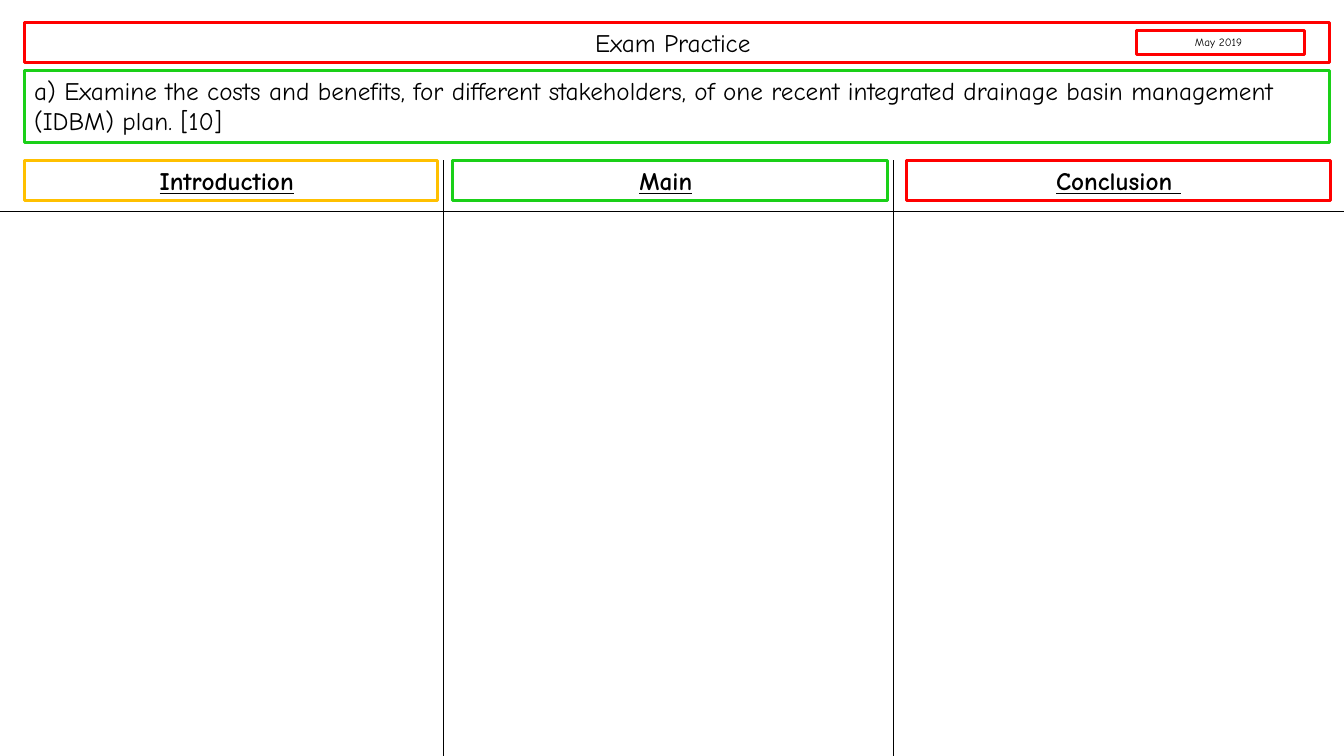
import pptx
import pptx.dml.color
import pptx.enum.shapes
import pptx.enum.text
import pptx.util

PX = 9144  # EMU per px, 100 px to the inch
SLIDE_W, SLIDE_H = 1333, 750
COLOURS = {
    "red": "FF0000",
    "green": "1AD018",
    "amber": "FFC000",
    "text": "000000",
    "divider": "000000",
}
LEFT = pptx.enum.text.PP_ALIGN.LEFT
CENTER = pptx.enum.text.PP_ALIGN.CENTER
HEADING = {"bold": True, "underline": True}


def px(*lengths):
    return [length * PX for length in lengths]


def rgb(name):
    return pptx.dml.color.RGBColor.from_string(COLOURS[name])


def add_box(slide, bounds, border, runs, size=18, align=CENTER):
    """Outlined text box; runs is a list of (text, font format)."""
    box = slide.shapes.add_textbox(*px(*bounds))
    box.line.color.rgb = rgb(border)
    box.line.width = pptx.util.Pt(2.25)
    frame = box.text_frame
    frame.word_wrap = True
    frame.auto_size = pptx.enum.text.MSO_AUTO_SIZE.SHAPE_TO_FIT_TEXT
    paragraph = frame.paragraphs[0]
    paragraph.alignment = align
    for text, extra in runs:
        run = paragraph.add_run()
        run.text = text
        run.font.color.rgb = rgb("text")
        font_format = {"name": "Comic Neue", "size": pptx.util.Pt(size), **extra}
        for attribute, value in font_format.items():
            setattr(run.font, attribute, value)


def add_divider(slide, *ends):
    straight = pptx.enum.shapes.MSO_CONNECTOR.STRAIGHT
    divider = slide.shapes.add_connector(straight, *px(*ends))
    divider.line.color.rgb = rgb("divider")
    divider.line.width = pptx.util.Pt(0.5)
    properties = divider._element.spPr
    properties.append(properties.makeelement(pptx.oxml.ns.qn("a:effectLst"), {}))


def main():
    deck = pptx.Presentation()
    deck.slide_width, deck.slide_height = px(SLIDE_W, SLIDE_H)
    slide = deck.slides.add_slide(deck.slide_layouts[6])

    # Question, title and exam date
    question = (
        "a) Examine the costs and benefits, for different stakeholders, of one "
        "recent integrated drainage basin management (IDBM) plan. [10]"
    )
    add_box(slide, (24, 70, 1295, 71), "green", [(question, {})], align=LEFT)
    add_box(slide, (24, 22, 1295, 40), "red", [("Exam Practice ", {})])
    add_box(slide, (1127, 30, 167, 24), "red", [("May 2019 ", {})], size=8)

    # Column headings
    top = 159
    columns = [
        (24, 410, "amber", [("Introduction", HEADING), (" ", {})]),
        (449, 431, "green", [("Main", HEADING), (" ", {})]),
        (899, 421, "red", [("Conclusion ", HEADING)]),
    ]
    for left, width, border, runs in columns:
        add_box(slide, (left, top, width, 40), border, runs)

    # Column and heading dividers
    for x in (440, 886):
        add_divider(slide, x, top, x, SLIDE_H)
    add_divider(slide, 0, 210, SLIDE_W, 210)

    deck.save("out.pptx")


if __name__ == "__main__":
    main()
